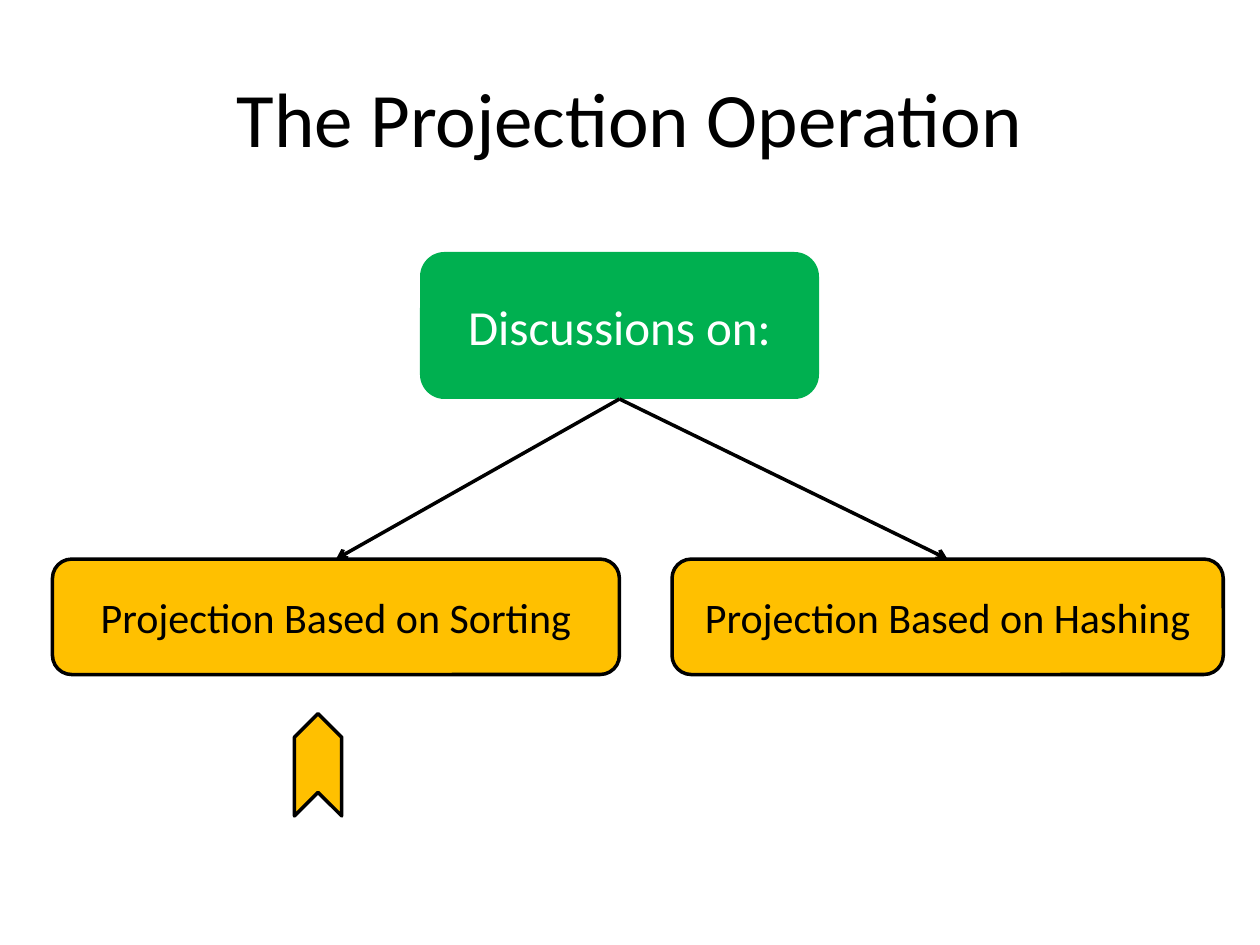
from lxml.etree import SubElement
from pptx import Presentation
from pptx.dml.color import RGBColor
from pptx.enum.shapes import MSO_CONNECTOR, MSO_SHAPE
from pptx.enum.text import MSO_ANCHOR, PP_ALIGN
from pptx.oxml.ns import qn
from pptx.util import Pt


def rgb(value):
    return RGBColor.from_string(value)


def set_text(sp, text, size, color, inset):
    tf = sp.text_frame
    tf.word_wrap = True
    tf.vertical_anchor = MSO_ANCHOR.MIDDLE
    tf.margin_top = tf.margin_bottom = Pt(inset)
    p = tf.paragraphs[0]
    p.text = text
    p.alignment = PP_ALIGN.CENTER
    p.font.name = "Calibri"
    p.font.size = Pt(size)
    p.font.color.rgb = rgb(color)


prs = Presentation()
prs.slide_width, prs.slide_height = Pt(720), Pt(540)
s = prs.slides.add_slide(prs.slide_layouts[6])

# Title
title = s.shapes.add_textbox(Pt(36), Pt(21.6), Pt(648), Pt(90))
set_text(title, "The Projection Operation", 44, "000000", 3.6)

# Root box, the two topics and the marker below the first topic
RR = MSO_SHAPE.ROUNDED_RECTANGLE
shapes = [
    (RR, 240, 144, 228, 84, "00B050", None, "Discussions on:", 28, "FFFFFF"),
    (RR, 30, 319.5, 324, 66, "FFC000", "000000", "Projection Based on Sorting", 24, "000000"),
    (RR, 384, 319.5, 315, 66, "FFC000", "000000", "Projection Based on Hashing", 24, "000000"),
    (MSO_SHAPE.CHEVRON, 152.5, 423.5, 58.5, 27, "FFC000", "000000", None, 0, None),
]
for kind, x, y, w, h, fill, line, text, size, color in shapes:
    sp = s.shapes.add_shape(kind, Pt(x), Pt(y), Pt(w), Pt(h))
    sp.shadow.inherit = False
    sp.fill.solid()
    sp.fill.fore_color.rgb = rgb(fill)
    if line:
        sp.line.color.rgb = rgb(line)
        sp.line.width = Pt(2)
    else:
        sp.line.fill.background()
    if text:
        set_text(sp, text, size, color, 0)
    else:
        sp.rotation = 270

# Arrows from the root box to each topic
for x in (192, 541.5):
    c = s.shapes.add_connector(MSO_CONNECTOR.STRAIGHT, Pt(354), Pt(228), Pt(x), Pt(319.5))
    c.line.color.rgb = rgb("000000")
    c.line.width = Pt(2)
    SubElement(c.line._get_or_add_ln(), qn("a:tailEnd"), type="arrow")
    SubElement(c._element.spPr, qn("a:effectLst"))

prs.save("out.pptx")
